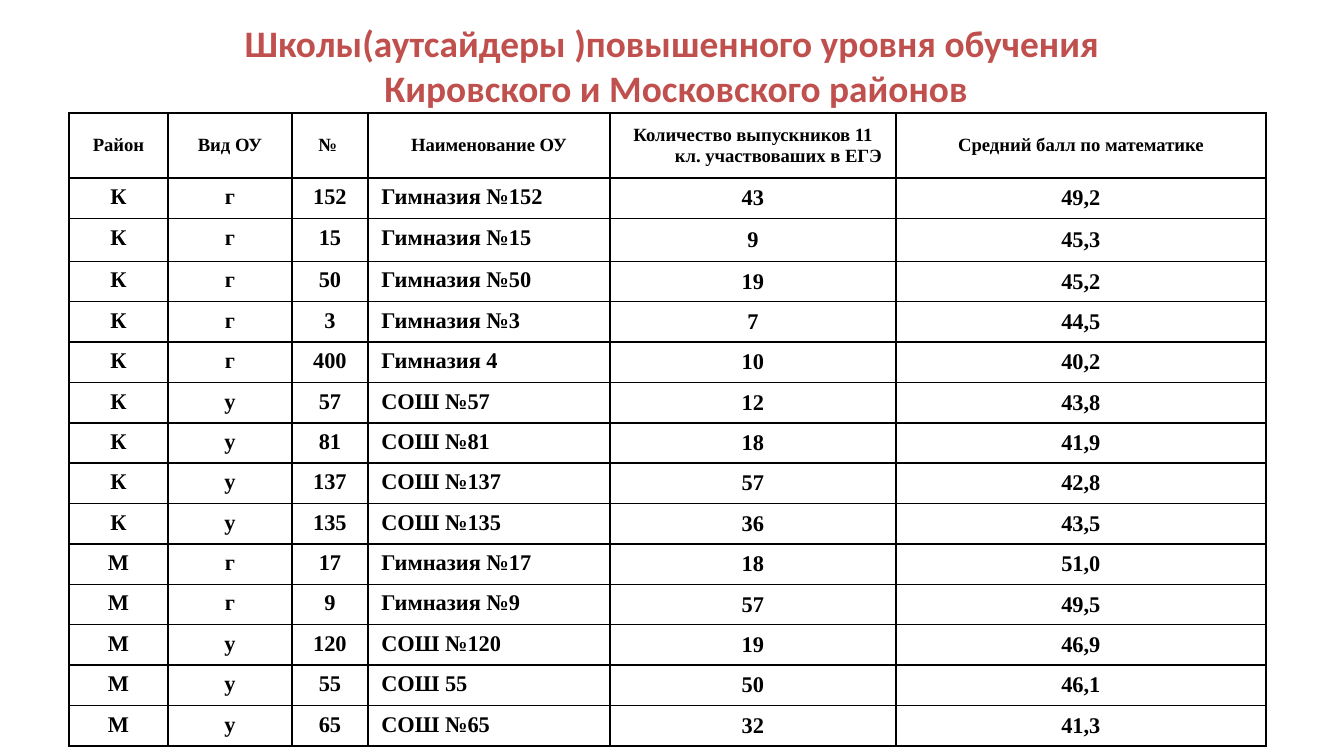
from lxml import etree
from pptx import Presentation
from pptx import util as u
from pptx.dml.color import RGBColor
from pptx.enum import text
from pptx.oxml import ns

PX = 914400 / 134.4  # EMU in one px
RED = RGBColor(0xC0, 0x50, 0x4D)
BLACK = RGBColor(0x00, 0x00, 0x00)

TITLE = "Школы(аутсайдеры )повышенного уровня обучения\v Кировского и Московского районов"
HEADER = ("Район", "Вид ОУ", "№ ", "Наименование ОУ",
          "Количество выпускников 11 кл. участвоваших в ЕГЭ", "Средний балл по математике")
SCHOOLS = [
    ("К", "г", "152", "Гимназия №152", "43", "49,2"),
    ("К", "г", "15", "Гимназия №15", "9", "45,3"),
    ("К", "г", "50", "Гимназия №50", "19", "45,2"),
    ("К", "г", "3", "Гимназия №3", "7", "44,5"),
    ("К", "г", "400", "Гимназия 4", "10", "40,2"),
    ("К", "у", "57", "СОШ №57", "12", "43,8"),
    ("К", "у", "81", "СОШ №81", "18", "41,9"),
    ("К", "у", "137", "СОШ №137", "57", "42,8"),
    ("К", "у", "135", "СОШ №135", "36", "43,5"),
    ("М", "г", "17", "Гимназия №17", "18", "51,0"),
    ("М", "г", "9", "Гимназия №9", "57", "49,5"),
    ("М", "у", "120", "СОШ №120", "19", "46,9"),
    ("М", "у", "55", "СОШ 55", "50", "46,1"),
    ("М", "у", "65", "СОШ №65", "32", "41,3"),
]
COL_WIDTHS = (99, 124, 76, 242, 286, 370)
HEADER_H, ROW_H, TALL_ROW_H = 65, 38, 43
TALL_ROW, NAME_COL, COUNT_COL = 2, 3, 4
HANGING = 51


def px(n):
    return u.Emu(round(n * PX))


def format_runs(p, font, size, color):
    for r in p.runs:
        r.font.name, r.font.size, r.font.bold = font, u.Pt(size), True
        r.font.color.rgb = color


def add_title(s, x, y, w, h):
    tf = s.shapes.add_textbox(px(x), px(y), px(w), px(h)).text_frame
    tf.word_wrap = True
    tf.vertical_anchor = text.MSO_ANCHOR.MIDDLE
    p = tf.paragraphs[0]
    p.text = TITLE
    p.alignment = text.PP_ALIGN.CENTER
    format_runs(p, "Calibri", 20, RED)


def add_borders(cell):
    tc_pr = cell._tc.get_or_add_tcPr()
    for side in ("a:lnL", "a:lnR", "a:lnT", "a:lnB"):
        ln = etree.SubElement(tc_pr, ns.qn(side), w=str(u.Pt(1)))
        fill = etree.SubElement(ln, ns.qn("a:solidFill"))
        etree.SubElement(fill, ns.qn("a:srgbClr"), val=str(BLACK))


def fill_cell(cell, value, row, col):
    add_borders(cell)
    cell.fill.background()
    if row == 0 or col >= COUNT_COL:
        cell.vertical_anchor = text.MSO_ANCHOR.MIDDLE
    cell.text_frame.text = value
    p = cell.text_frame.paragraphs[0]
    is_name = row > 0 and col == NAME_COL
    p.alignment = text.PP_ALIGN.LEFT if is_name else text.PP_ALIGN.CENTER
    # Hanging indent
    p_pr = p._p.get_or_add_pPr()
    p_pr.set("marL", str(px(HANGING)))
    p_pr.set("indent", str(-px(HANGING)))
    format_runs(p, "Times New Roman", 10 if row == 0 else 12, BLACK)


def add_school_table(s, x, y):
    rows = [HEADER] + SCHOOLS
    heights = [HEADER_H] + [ROW_H] * len(SCHOOLS)
    heights[TALL_ROW] = TALL_ROW_H
    table = s.shapes.add_table(len(rows), len(COL_WIDTHS), px(x), px(y),
                               px(sum(COL_WIDTHS)), px(sum(heights))).table
    table.first_row = table.horz_banding = False
    for column, w in zip(table.columns, COL_WIDTHS):
        column.width = px(w)
    for i, (values, h) in enumerate(zip(rows, heights)):
        table.rows[i].height = px(h)
        for j, value in enumerate(values):
            fill_cell(table.cell(i, j), value, i, j)


def main():
    prs = Presentation()
    prs.slide_width, prs.slide_height = px(1344), px(756)
    s = prs.slides.add_slide(prs.slide_layouts[6])
    # Heading
    add_title(s, 67, 28, 1210, 74)
    # Schools with their results
    add_school_table(s, 69, 113)
    prs.save("out.pptx")


if __name__ == "__main__":
    main()
